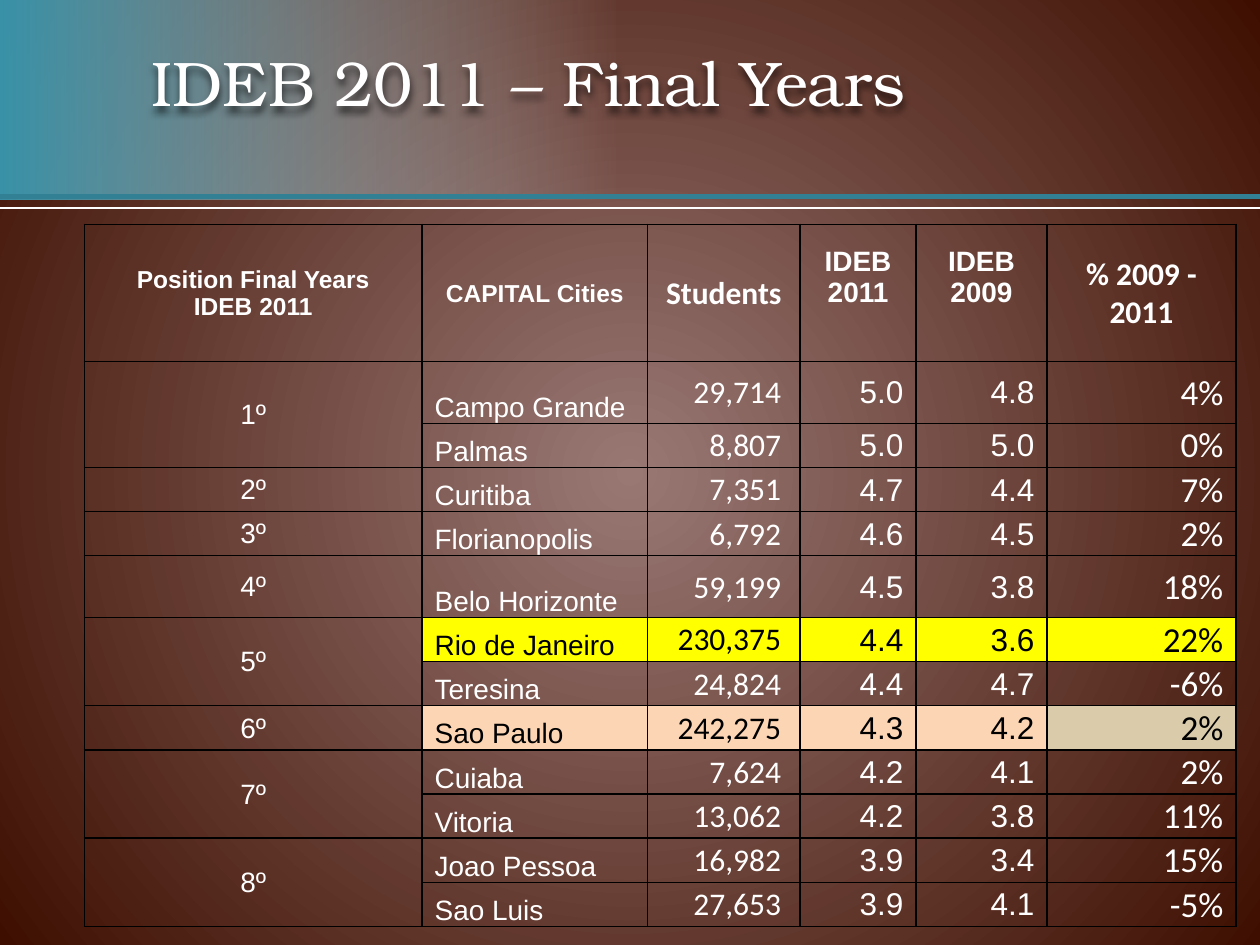
from dataclasses import dataclass

from lxml import etree
from pptx import Presentation
from pptx.dml.color import RGBColor
from pptx.enum.shapes import MSO_CONNECTOR, MSO_SHAPE
from pptx.enum.text import MSO_ANCHOR, PP_ALIGN
from pptx.util import Inches, Pt

LEFT, CENTER, RIGHT = PP_ALIGN.LEFT, PP_ALIGN.CENTER, PP_ALIGN.RIGHT
MIDDLE, BOTTOM = MSO_ANCHOR.MIDDLE, MSO_ANCHOR.BOTTOM
RECTANGLE, STRAIGHT = MSO_SHAPE.RECTANGLE, MSO_CONNECTOR.STRAIGHT
DRAWING = "http://schemas.openxmlformats.org/drawingml/2006/main"
SLIDES = "http://schemas.openxmlformats.org/presentationml/2006/main"


@dataclass(frozen=True)
class Theme:
    """Colours, fonts and type sizes of the deck."""
    white: str = "FFFFFF"
    black: str = "000000"
    glow: str = "997874"
    maroon: str = "3E0F01"
    teal: str = "3891A7"
    mist: str = "E8EEF1"
    rule: str = "318093"
    yellow: str = "FFFF00"
    peach: str = "FCD5B4"
    sand: str = "DACCAB"
    serif: str = "TeX Gyre Bonum"
    sans: str = "Arial"
    number: str = "Calibri"
    title: int = 36
    large: int = 20
    medium: int = 18
    body: int = 16
    small: int = 14


THEME = Theme()
COLUMN_WIDTHS = [2.68, 1.79, 1.21, 0.92, 1.04, 1.5]
HEADER_HEIGHT, TALL_ROW, ROW = 1.09, 0.49, 0.35
TALL_CITIES = ("Campo Grande", "Belo Horizonte")
HEADERS = [
    ("Position Final Years\nIDEB 2011", THEME.sans, THEME.small, 0),
    ("CAPITAL Cities", THEME.sans, THEME.small, 0),
    ("Students", THEME.number, THEME.medium, 0),
    ("IDEB\v2011", THEME.sans, THEME.body, 0.25),
    ("IDEB\v2009", THEME.sans, THEME.body, 0.25),
    ("% 2009 -\v2011", THEME.number, THEME.medium, 0),
]
BODY_STYLES = [
    dict(font=THEME.sans, size=THEME.body, align=LEFT, anchor=BOTTOM),
    dict(font=THEME.number, size=THEME.medium, align=RIGHT, right=0.15),
    dict(font=THEME.sans, size=THEME.medium, align=RIGHT),
    dict(font=THEME.sans, size=THEME.medium, align=RIGHT),
    dict(font=THEME.number, size=THEME.large, align=RIGHT),
]
HIGHLIGHTS = {
    "Rio de Janeiro": [THEME.yellow] * 5,
    "Sao Paulo": [THEME.peach] * 4 + [THEME.sand],
}
RANKING = [
    ("1º", [("Campo Grande", "29,714", "5.0", "4.8", "4%"),
            ("Palmas", "8,807", "5.0", "5.0", "0%")]),
    ("2º", [("Curitiba", "7,351", "4.7", "4.4", "7%")]),
    ("3º", [("Florianopolis", "6,792", "4.6", "4.5", "2%")]),
    ("4º", [("Belo Horizonte", "59,199", "4.5", "3.8", "18%")]),
    ("5º", [("Rio de Janeiro", "230,375", "4.4", "3.6", "22%"),
            ("Teresina", "24,824", "4.4", "4.7", "-6%")]),
    ("6º", [("Sao Paulo", "242,275", "4.3", "4.2", "2%")]),
    ("7º", [("Cuiaba", "7,624", "4.2", "4.1", "2%"),
            ("Vitoria", "13,062", "4.2", "3.8", "11%")]),
    ("8º", [("Joao Pessoa", "16,982", "3.9", "3.4", "15%"),
            ("Sao Luis", "27,653", "3.9", "4.1", "-5%")]),
]


def xml(markup):
    """Turn DrawingML markup into an element."""
    return etree.fromstring(f'<x xmlns:a="{DRAWING}" xmlns:p="{SLIDES}">{markup}</x>')[0]


def write(frame, text, font=THEME.sans, size=THEME.body, color=THEME.white,
          bold=False, align=LEFT):
    """Write text into a frame, one paragraph to a line."""
    for index, line in enumerate(text.split("\n")):
        para = frame.add_paragraph() if index else frame.paragraphs[0]
        para.text = line
        para.alignment = align
        for span in para.runs:
            span.font.name = font
            span.font.size = Pt(size)
            span.font.bold = bold
            span.font.color.rgb = RGBColor.from_string(color)


def paint_background(page):
    """Give the page a radial gradient."""
    page.element.cSld.insert(0, xml(
        '<p:bg><p:bgPr><a:gradFill rotWithShape="1"><a:gsLst>'
        f'<a:gs pos="0"><a:srgbClr val="{THEME.glow}"/></a:gs>'
        f'<a:gs pos="100000"><a:srgbClr val="{THEME.maroon}"/></a:gs></a:gsLst>'
        '<a:path path="circle"><a:fillToRect l="50000" t="50000" r="50000" b="50000"/>'
        '</a:path></a:gradFill><a:effectLst/></p:bgPr></p:bg>'))


def add_rule(page, left, top, width, color, weight):
    """Draw a horizontal rule."""
    rule = page.shapes.add_connector(
        STRAIGHT, Inches(left), Inches(top), Inches(left + width), Inches(top))
    rule.line.color.rgb = RGBColor.from_string(color)
    rule.line.width = Pt(weight)
    rule.element.spPr.append(xml("<a:effectLst/>"))


def add_banner(page, left, top, width, height):
    """Place the fading band and the two rules at its foot."""
    band = page.shapes.add_shape(
        RECTANGLE, Inches(left), Inches(top), Inches(width), Inches(height))
    band.shadow.inherit = False
    band.line.fill.background()
    band.element.spPr.replace(band.element.spPr.find(f"{{{DRAWING}}}prstGeom").getnext(), xml(
        '<a:gradFill><a:gsLst>'
        f'<a:gs pos="0"><a:srgbClr val="{THEME.teal}"/></a:gs>'
        f'<a:gs pos="49000"><a:srgbClr val="{THEME.mist}"><a:alpha val="0"/></a:srgbClr></a:gs>'
        '</a:gsLst><a:lin ang="0" scaled="0"/></a:gradFill>')
    ) if band.element.spPr.find(f"{{{DRAWING}}}ln").getprevious().tag.endswith("Fill") else \
        band.element.spPr.insert(2, xml(
            '<a:gradFill><a:gsLst>'
            f'<a:gs pos="0"><a:srgbClr val="{THEME.teal}"/></a:gs>'
            f'<a:gs pos="49000"><a:srgbClr val="{THEME.mist}"><a:alpha val="0"/></a:srgbClr></a:gs>'
            '</a:gsLst><a:lin ang="0" scaled="0"/></a:gradFill>'))
    add_rule(page, left, top + height - 0.02, width, THEME.rule, 3)
    add_rule(page, left, top + height + 0.07, width, THEME.white, 1.25)


def add_title(page, left, top, width, height):
    """Place the title with its soft shadow."""
    box = page.shapes.add_textbox(
        Inches(left), Inches(top), Inches(width), Inches(height))
    box.text_frame.word_wrap = True
    box.text_frame.vertical_anchor = MIDDLE
    write(box.text_frame, "IDEB 2011 – Final Years", font=THEME.serif, size=THEME.title)
    box.element.spPr.append(xml(
        '<a:effectLst><a:outerShdw blurRad="50800" dist="38100" dir="5400000">'
        f'<a:srgbClr val="{THEME.black}"><a:alpha val="60000"/></a:srgbClr>'
        '</a:outerShdw></a:effectLst>'))


def fill_cell(cell, text, fill=None, anchor=MIDDLE, right=0.1, bottom=0, **style):
    """Fill one table cell with text and colour."""
    cell.margin_left, cell.margin_right = Inches(0.1), Inches(right)
    cell.margin_top, cell.margin_bottom = Inches(0.01), Inches(bottom)
    cell.vertical_anchor = anchor
    write(cell.text_frame, text, color=THEME.black if fill else THEME.white, **style)
    if fill:
        cell.fill.solid()
        cell.fill.fore_color.rgb = RGBColor.from_string(fill)


def add_ranking(page, left, top, width):
    """Place the ranking table, merging positions that cities share."""
    cities = [city for _, group in RANKING for city in group]
    heights = [HEADER_HEIGHT] + [TALL_ROW if city[0] in TALL_CITIES else ROW for city in cities]
    table = page.shapes.add_table(
        len(heights), len(COLUMN_WIDTHS), Inches(left), Inches(top),
        Inches(width), Inches(sum(heights))).table
    table.first_row = table.horz_banding = False
    for column, size in zip(table.columns, COLUMN_WIDTHS):
        column.width = Inches(size)
    for row, size in zip(table.rows, heights):
        row.height = Inches(size)
    for cell in table.iter_cells():
        for side in "LRTB":
            cell._tc.get_or_add_tcPr().append(xml(
                f'<a:ln{side} w="12700"><a:solidFill><a:srgbClr val="{THEME.black}"/>'
                f'</a:solidFill></a:ln{side}>'))
        cell.fill.background()
    for column, (text, font, size, bottom) in enumerate(HEADERS):
        fill_cell(table.cell(0, column), text, font=font, size=size, bottom=bottom,
                  bold=True, align=CENTER)
    row = 1
    for position, group in RANKING:
        if len(group) > 1:
            table.cell(row, 0).merge(table.cell(row + len(group) - 1, 0))
        fill_cell(table.cell(row, 0), position, align=CENTER)
        for city in group:
            fills = HIGHLIGHTS.get(city[0], [None] * len(city))
            for column, (text, fill, style) in enumerate(zip(city, fills, BODY_STYLES), 1):
                fill_cell(table.cell(row, column), text, fill=fill, **style)
            row += 1


def main():
    """Build the deck and save it."""
    deck = Presentation()
    deck.slide_width, deck.slide_height = Inches(10), Inches(7.5)
    page = deck.slides.add_slide(deck.slide_layouts[6])
    paint_background(page)
    add_banner(page, 0, 0, 10, 1.58)
    add_ranking(page, 0.67, 1.78, 9.14)
    add_title(page, 1.1, 0.29, 9.02, 0.71)
    deck.save("out.pptx")


if __name__ == "__main__":
    main()
